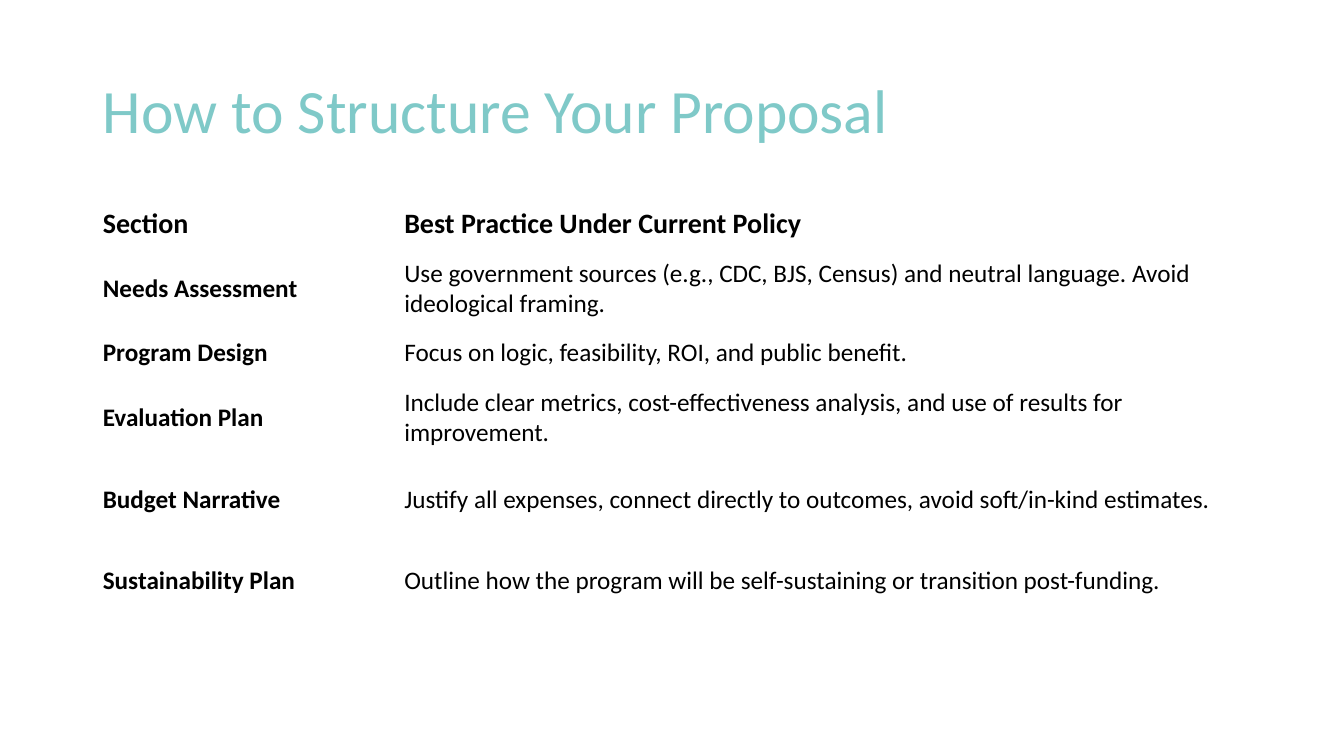
from pptx import Presentation
from pptx.dml.color import RGBColor
from pptx.enum.text import MSO_ANCHOR, PP_ALIGN
from pptx.util import Inches, Pt

COLORS = {"title": "7FC9C8", "text": "000000"}
SECTIONS = [
    ("Section", "Best Practice Under Current Policy"),
    ("Needs Assessment", "Use government sources (e.g., CDC, BJS, Census) and neutral language. "
                         "Avoid ideological framing."),
    ("Program Design", "Focus on logic, feasibility, ROI, and public benefit."),
    ("Evaluation Plan", "Include clear metrics, cost-effectiveness analysis, and use of results "
                        "for improvement."),
    ("Budget Narrative", "Justify all expenses, connect directly to outcomes, avoid soft/in-kind "
                         "estimates."),
    ("Sustainability Plan", "Outline how the program will be self-sustaining or transition "
                            "post-funding."),
]
COLUMN_WIDTHS = [2.99, 8.51]
ROW_HEIGHTS = [0.47, 0.81, 0.47, 0.81, 0.81, 0.81]
LEFT, TITLE_TOP, TITLE_HEIGHT, TABLE_TOP = 0.92, 0.4, 1.45, 1.99


class SlideBuilder:
    """Hold the text style and the current slide."""

    def __init__(self, slide, font="Calibri"):
        """Keep the slide and its font name."""
        self.slide = slide
        self.font = font

    def add_run(self, paragraph, text, size, color, bold=False):
        """Add one styled run to a paragraph."""
        run = paragraph.add_run()
        run.text = text
        run.font.name = self.font
        run.font.size = Pt(size)
        run.font.bold = bold
        run.font.color.rgb = RGBColor.from_string(COLORS[color])

    def add_title(self, text, left, top, width, height):
        """Place and format the title placeholder."""
        title = self.slide.shapes.title
        title.left, title.top = Inches(left), Inches(top)
        title.width, title.height = Inches(width), Inches(height)
        title.text_frame.vertical_anchor = MSO_ANCHOR.MIDDLE
        paragraph = title.text_frame.paragraphs[0]
        paragraph.alignment = PP_ALIGN.LEFT
        paragraph.line_spacing = 0.9
        self.add_run(paragraph, text, 44, "title")

    def add_table(self, rows, left, top, widths, heights):
        """Add a plain table with a bold header row and bold first column."""
        frame = self.slide.shapes.add_table(
            len(rows), len(widths), Inches(left), Inches(top),
            Inches(sum(widths)), Inches(sum(heights)))
        table = frame.table
        table.first_row = table.horz_banding = False
        for column, width in zip(table.columns, widths):
            column.width = Inches(width)
        for row, height in zip(table.rows, heights):
            row.height = Inches(height)
        for row_index, row in enumerate(rows):
            for column_index, text in enumerate(row):
                cell = table.cell(row_index, column_index)
                cell.fill.background()
                cell.vertical_anchor = MSO_ANCHOR.MIDDLE
                is_header = row_index == 0
                self.add_run(cell.text_frame.paragraphs[0], text, 20 if is_header else 18,
                             "text", is_header or column_index == 0)


def main():
    """Build and save the proposal structure slide."""
    presentation = Presentation()
    presentation.slide_width, presentation.slide_height = Inches(13.33), Inches(7.5)
    slide = presentation.slides.add_slide(presentation.slide_layouts[5])
    builder = SlideBuilder(slide)
    builder.add_title("How to Structure Your Proposal", LEFT, TITLE_TOP,
                      sum(COLUMN_WIDTHS), TITLE_HEIGHT)
    builder.add_table(SECTIONS, LEFT, TABLE_TOP, COLUMN_WIDTHS, ROW_HEIGHTS)
    presentation.save("out.pptx")


if __name__ == "__main__":
    main()
